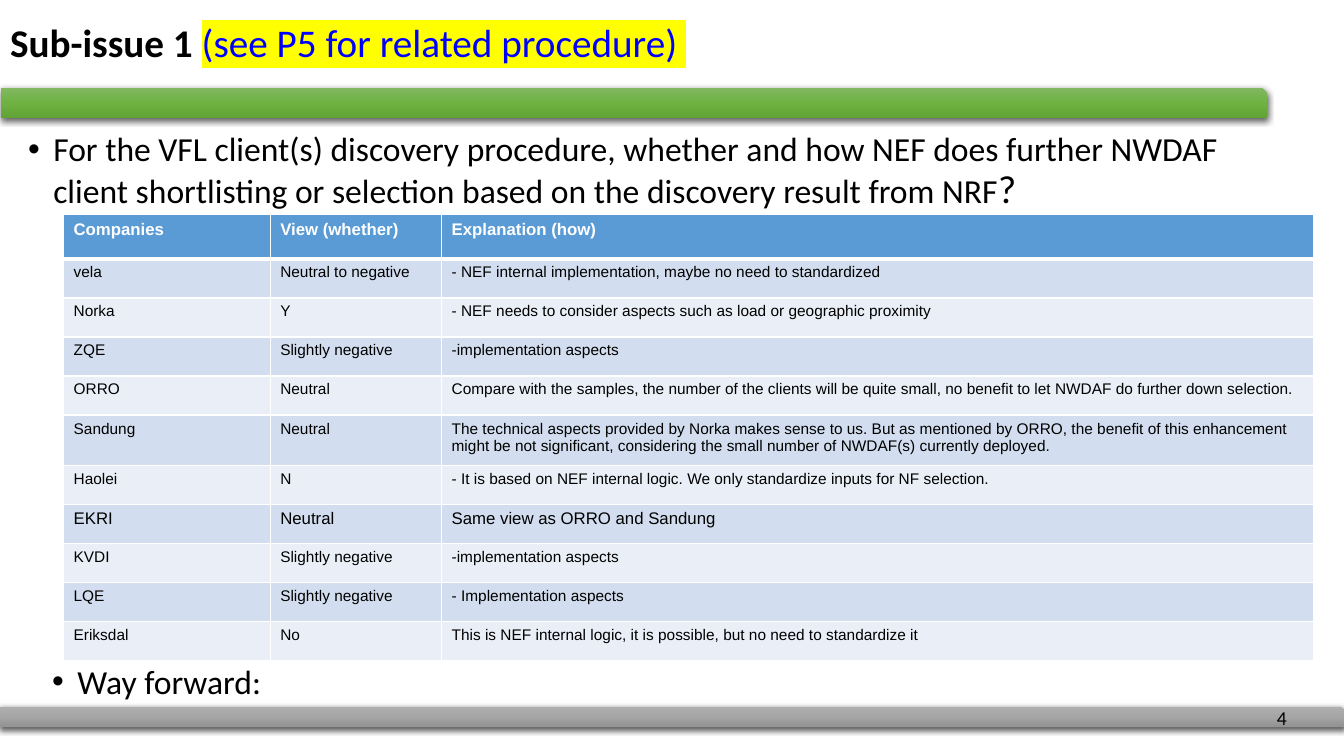
from lxml.etree import SubElement
from pptx import Presentation
from pptx.dml.color import RGBColor
from pptx.enum.shapes import MSO_SHAPE
from pptx.enum.text import MSO_ANCHOR, PP_ALIGN
from pptx.oxml.ns import qn
from pptx.util import Pt

TITLE = "Sub-issue 1 "
TITLE_NOTE = "(see P5 for related procedure) "
QUESTION = ("For the VFL client(s) discovery procedure, whether and how NEF does further NWDAF "
            "client shortlisting or selection based on the discovery result from NRF")
WAY_FORWARD = "Way forward:"
PAGE = "4"
ROWS = [
    ("Companies", "View (whether)", "Explanation (how)"),
    ("vela", "Neutral to negative", "- NEF internal implementation, maybe no need to standardized"),
    ("Norka", "Y", "- NEF needs to consider aspects such as load or geographic proximity"),
    ("ZQE", "Slightly negative", "-implementation aspects"),
    ("ORRO", "Neutral", "Compare with the samples, the number of the clients will be quite small, "
     "no benefit to let NWDAF do further down selection."),
    ("Sandung", "Neutral", "The technical aspects provided by Norka makes sense to us. But as mentioned "
     "by ORRO, the benefit of this enhancement might be not significant, considering the small number "
     "of NWDAF(s) currently deployed."),
    ("Haolei", "N", "- It is based on NEF internal logic. We only standardize inputs for NF selection."),
    ("EKRI", "Neutral", "Same view as ORRO and Sandung"),
    ("KVDI", "Slightly negative", "-implementation aspects"),
    ("LQE", "Slightly negative", "- Implementation aspects"),
    ("Eriksdal", "No", "This is NEF internal logic, it is possible, but no need to standardize it"),
]
COL_WIDTHS = (147.6, 122.4, 622.8)
HEADER_HEIGHT, ROW_HEIGHT, TALL_HEIGHT = 31.5, 27.9, 36
TALL_ROW, LARGE_ROW = 5, 7
BANDS = ("EAEFF7", "D2DEEF")
BARS = [
    ((0, 504.7, 960, 14.4), ("AFAFAF", "A5A5A5", "939393")),
    ((0.7, 62.6, 904.3, 21.6), ("81B861", "6FB242", "62A336")),
]


def color(value):
    return RGBColor.from_string(value)


def add_color(parent, value):
    return SubElement(parent, qn("a:srgbClr"), val=value)


def add_text(p, text, size=24, font="Calibri", fill="000000", bold=False, highlight=None):
    r = p.add_run()
    r.text = text
    r.font.size, r.font.name, r.font.bold = Pt(size), font, bold
    r.font.fill.solid()
    r.font.fill.fore_color.rgb = color(fill)
    if highlight:
        rPr = r.font._element
        mark = SubElement(rPr, qn("a:highlight"))
        add_color(mark, highlight)
        rPr.find(qn("a:solidFill")).addnext(mark)


def add_bar(s, box, stops):
    sp = s.shapes.add_shape(MSO_SHAPE.SNIP_1_RECTANGLE, *map(Pt, box))
    sp.line.fill.background()
    sp.fill.gradient()
    sp.fill.gradient_angle = 270
    spPr = sp._element.spPr
    gradient = spPr.find(".//" + qn("a:gsLst"))
    for stop in list(gradient):
        gradient.remove(stop)
    for i, value in enumerate(stops):
        add_color(SubElement(gradient, qn("a:gs"), pos=str(i * 50000)), value)
    sp.shadow.inherit = False
    shadow = SubElement(spPr.find(qn("a:effectLst")), qn("a:outerShdw"), blurRad=str(Pt(4.5)),
                        dist=str(Pt(1.5)), dir="5400000", rotWithShape="0")
    SubElement(add_color(shadow, "000000"), qn("a:alpha"), val="63000")


def add_box(s, box, wrap=True):
    tf = s.shapes.add_textbox(*map(Pt, box)).text_frame
    tf.word_wrap = wrap
    return tf.paragraphs[0]


def add_bullet(s, box):
    p = add_box(s, box)
    pPr = p._p.get_or_add_pPr()
    pPr.set("marL", str(Pt(18)))
    pPr.set("indent", str(Pt(-18)))
    SubElement(pPr, qn("a:buFont"), typeface="Arial")
    SubElement(pPr, qn("a:buChar"), char="•")
    p.line_spacing = 0.9
    return p


def add_borders(cell, bottom):
    tcPr = cell._tc.get_or_add_tcPr()
    for i, (side, width) in enumerate((("L", 1), ("R", 1), ("T", 1), ("B", bottom))):
        ln = SubElement(tcPr, qn("a:ln" + side), w=str(Pt(width)))
        add_color(SubElement(ln, qn("a:solidFill")), "FFFFFF")
        tcPr.insert(i, ln)


def add_views(s):
    heights = [HEADER_HEIGHT] + [ROW_HEIGHT] * (len(ROWS) - 1)
    heights[TALL_ROW] = TALL_HEIGHT
    table = s.shapes.add_table(len(ROWS), len(COL_WIDTHS), Pt(45.4), Pt(153.4),
                               Pt(sum(COL_WIDTHS)), Pt(sum(heights))).table
    table.horz_banding = False
    for column, width in zip(table.columns, COL_WIDTHS):
        column.width = Pt(width)
    for i, (values, height) in enumerate(zip(ROWS, heights)):
        header = i == 0
        table.rows[i].height = Pt(height)
        for cell, value in zip(table.rows[i].cells, values):
            cell.fill.solid()
            cell.fill.fore_color.rgb = color("5B9BD5" if header else BANDS[i % 2])
            add_borders(cell, 3 if header else 1)
            add_text(cell.text_frame.paragraphs[0], value, font="Arial", bold=header,
                     size=12 if header or i == LARGE_ROW else 11,
                     fill="FFFFFF" if header else "000000")


def main():
    prs = Presentation()
    prs.slide_width, prs.slide_height = Pt(960), Pt(540)
    s = prs.slides.add_slide(prs.slide_layouts[5])
    for box, stops in BARS:
        add_bar(s, box, stops)

    title = s.shapes.title
    title.left, title.top, title.width, title.height = map(Pt, (0, 0, 828, 64))
    tf = title.text_frame
    tf.vertical_anchor = MSO_ANCHOR.MIDDLE
    p = tf.paragraphs[0]
    p.alignment, p.line_spacing = PP_ALIGN.LEFT, 0.9
    add_text(p, TITLE, size=28, bold=True)
    add_text(p, TITLE_NOTE, size=28, fill="0000FF", highlight="FFFF00")

    p = add_bullet(s, (13, 91.4, 883.4, 60))
    add_text(p, QUESTION)
    add_text(p, "?", size=28)
    add_views(s)
    add_text(add_bullet(s, (30.2, 471.6, 871.2, 33)), WAY_FORWARD)
    add_text(add_box(s, (905, 500.4, 31, 24.5), wrap=False), PAGE, size=14)
    prs.save("out.pptx")


if __name__ == "__main__":
    main()
